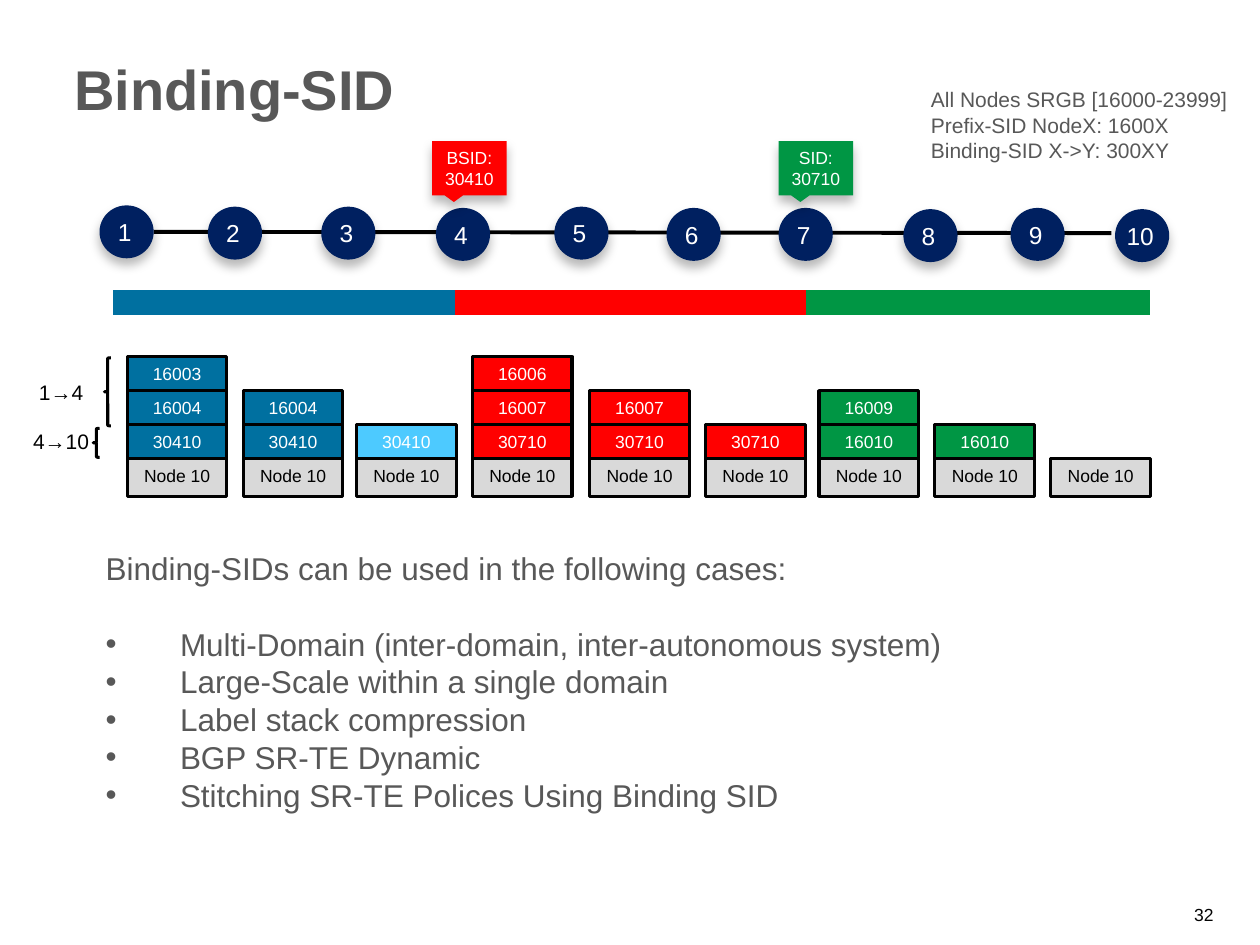
import pptx
import pptx.util
import pptx.dml.color
import pptx.enum.shapes
import pptx.enum.text
import pptx.oxml
import pptx.oxml.ns

Inches, Pt = pptx.util.Inches, pptx.util.Pt
SHAPE = pptx.enum.shapes.MSO_SHAPE
ALIGN = pptx.enum.text.PP_ALIGN
ANCHOR = pptx.enum.text.MSO_ANCHOR

# Content
TITLE = "Binding-SID"
LEGEND = ["All Nodes SRGB [16000-23999]", "Prefix-SID NodeX: 1600X", "Binding-SID X->Y: 300XY"]
NODES = [(0.79, 1.63), (1.65, 1.64), (2.55, 1.64), (3.46, 1.65), (4.4, 1.64),
         (5.29, 1.65), (6.18, 1.65), (7.17, 1.66), (8.02, 1.65), (8.85, 1.66)]
DOMAINS = [("blue", 0.9, 3.61), ("red", 3.61, 6.4), ("green", 6.4, 9.13)]
CALLOUTS = [(3.43, "red", ["BSID:", "30410"]), (6.18, "green", ["SID:", "30710"])]
# Left edge, colour, and labels from the bottom of the stack to the top
STACKS = [
    (1.01, "blue", ["30410", "16004", "16003"]),
    (1.93, "blue", ["30410", "16004"]),
    (2.83, "sky", ["30410"]),
    (3.75, "red", ["30710", "16007", "16006"]),
    (4.68, "red", ["30710", "16007"]),
    (5.6, "red", ["30710"]),
    (6.5, "green", ["16010", "16009"]),
    (7.42, "green", ["16010"]),
    (8.34, "green", []),
]
SEGMENTS = [("1→4", 2.96, (0.83, 2.84, 0.05, 0.54)), ("4→10", 3.35, (0.74, 3.4, 0.05, 0.23))]
INTRO = "Binding-SIDs can be used in the following cases:"
CASES = ["Multi-Domain (inter-domain, inter-autonomous system)",
         "Large-Scale within a single domain", "Label stack compression",
         "BGP SR-TE Dynamic", "Stitching SR-TE Polices Using Binding SID"]
PAGE = "32"

COLORS = {"navy": "002060", "blue": "0070A0", "sky": "4DCAFF", "red": "FF0000",
          "green": "009644", "grey": "D9D9D9", "text": "585858", "page": "040404",
          "black": "000000", "white": "FFFFFF"}

STACK_BASE, LABEL_HEIGHT, CELL_WIDTH, PAYLOAD_HEIGHT = 3.64, 0.27, 0.79, 0.3

deck = pptx.Presentation()
deck.slide_width, deck.slide_height = Inches(10), Inches(7.5)
slide = deck.slides.add_slide(deck.slide_layouts[6])


def rgb(name):
    return pptx.dml.color.RGBColor.from_string(COLORS[name])


def write(frame, lines, size, color, align=ALIGN.LEFT, bold=False, **frame_format):
    for attribute, value in frame_format.items():
        setattr(frame, attribute, value)
    font_format = {"name": "Arial", "size": Pt(size), "bold": bold}
    for index, line in enumerate(lines):
        paragraph = frame.paragraphs[0] if index == 0 else frame.add_paragraph()
        paragraph.alignment = align
        run = paragraph.add_run()
        run.text = line
        for attribute, value in font_format.items():
            setattr(run.font, attribute, value)
        run.font.color.rgb = rgb(color)


def add_text(box, lines, size, color, **options):
    frame = slide.shapes.add_textbox(*map(Inches, box)).text_frame
    write(frame, lines, size, color, word_wrap=True, **options)
    return frame


def add_effects(properties, content=""):
    properties.append(pptx.oxml.parse_xml(
        f'<a:effectLst {pptx.oxml.ns.nsdecls("a")}>{content}</a:effectLst>'))


def add_block(kind, box, fill=None, outline=None, shadow=False):
    block = slide.shapes.add_shape(kind, *map(Inches, box))
    if fill:
        block.fill.solid()
        block.fill.fore_color.rgb = rgb(fill)
    else:
        block.fill.background()
    if outline:
        block.line.color.rgb = rgb(outline)
        block.line.width = Pt(1.75)
    else:
        block.line.fill.background()
    if shadow:
        add_effects(block._element.spPr,
                    f'<a:outerShdw blurRad="{Pt(6)}" dist="{Pt(4)}" dir="5400000" rotWithShape="0">'
                    f'<a:srgbClr val="{COLORS["black"]}"><a:alpha val="27000"/></a:srgbClr>'
                    '</a:outerShdw>')
    else:
        block.shadow.inherit = False
    return block


def add_line(x1, y1, x2, y2, color, width):
    line = slide.shapes.add_connector(pptx.enum.shapes.MSO_CONNECTOR.STRAIGHT,
                                      *map(Inches, (x1, y1, x2, y2)))
    line.line.color.rgb = rgb(color)
    line.line.width = Pt(width)
    add_effects(line._element.spPr)


# Title, legend and page number
add_text((0.49, 0.38, 3.2, 0.64), [TITLE], 32, "text", bold=True)
add_text((7.29, 0.64, 3.24, 0.71), LEGEND, 12, "text")
add_text((9.13, 7.13, 0.6, 0.26), [PAGE], 10, "page", align=ALIGN.RIGHT,
         vertical_anchor=ANCHOR.BOTTOM)

# Chain of nodes
add_line(1.22, 1.84, 8.82, 1.85, "black", 2.25)
for number, (left, top) in enumerate(NODES, 1):
    node = add_block(SHAPE.OVAL, (left, top, 0.43, 0.42), "navy", shadow=True)
    write(node.text_frame, [str(number)], 14, "white", ALIGN.CENTER, word_wrap=False,
          vertical_anchor=ANCHOR.MIDDLE, margin_left=0, margin_right=Inches(0.03),
          margin_top=0, margin_bottom=0)

# Domain bar
for color, start, end in DOMAINS:
    add_line(start, 2.4, end, 2.4, color, 14)

# SID callouts
for left, color, lines in CALLOUTS:
    callout = add_block(SHAPE.RECTANGULAR_CALLOUT, (left, 1.12, 0.59, 0.43), color, shadow=True)
    write(callout.text_frame, lines, 10, "white", ALIGN.CENTER, word_wrap=True,
          vertical_anchor=ANCHOR.MIDDLE, margin_left=0, margin_right=0)

# Label stacks, each on its payload
for left, color, labels in STACKS:
    cells = [("Node 10", STACK_BASE, PAYLOAD_HEIGHT, "grey", "black", ANCHOR.TOP)]
    cells += [(label, STACK_BASE - level * LABEL_HEIGHT, LABEL_HEIGHT, color, "white", ANCHOR.MIDDLE)
              for level, label in enumerate(labels, 1)]
    for label, top, height, fill, ink, anchor in cells:
        cell = add_block(SHAPE.RECTANGLE, (left, top, CELL_WIDTH, height), fill, "black")
        write(cell.text_frame, [label], 10, ink, ALIGN.CENTER, word_wrap=True,
              vertical_anchor=anchor)

# Braces with their path segments
for label, top, brace in SEGMENTS:
    add_block(SHAPE.LEFT_BRACE, brace, outline="black")
    add_text((0.13, top, 0.71, 0.26), [label], 12, "black", align=ALIGN.CENTER,
             margin_left=0, margin_right=0)

# Use cases
body = add_text((0.74, 4.31, 8.32, 2.22), [INTRO, *CASES], 18, "text")
body.paragraphs[0].space_after = Pt(21.5)
for case in body.paragraphs[1:]:
    properties = case._p.get_or_add_pPr()
    properties.set("marL", str(Inches(0.59)))
    properties.set("indent", str(-Inches(0.59)))
    for bullet in ('buFont {} typeface="Arial"', 'buChar {} char="•"'):
        properties.append(pptx.oxml.parse_xml(
            f'<a:{bullet.format(pptx.oxml.ns.nsdecls("a"))}/>'))

deck.save("out.pptx")
